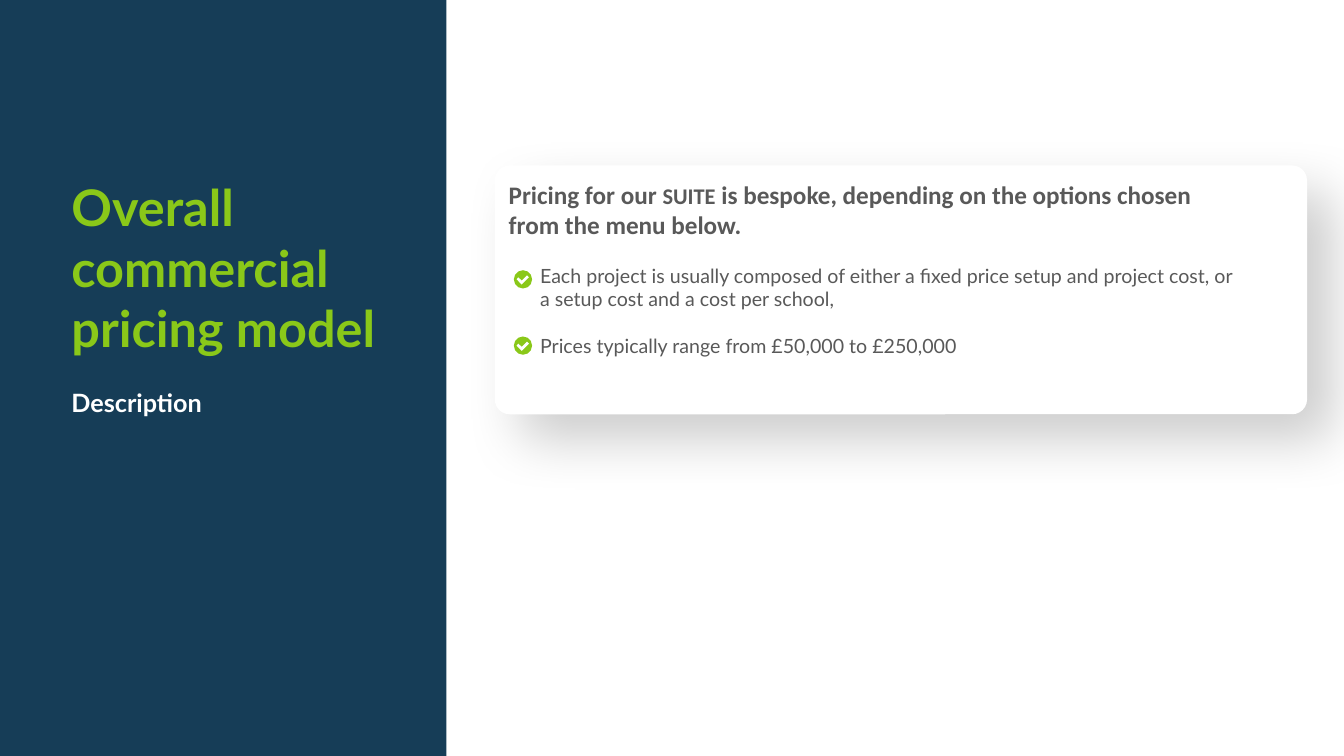
"""Build the pricing model slide."""
import pptx
import pptx.dml.color
import pptx.enum.shapes
import pptx.enum.text
import pptx.oxml
import pptx.oxml.ns
import pptx.util

Cm = pptx.util.Cm
Pt = pptx.util.Pt
SHAPES = pptx.enum.shapes.MSO_SHAPE

NAVY = "163D57"
GREEN = "8AC819"
WHITE = "FFFFFF"
GREY = "595959"

TITLE = {"name": "Lato", "size": Pt(36), "bold": True}
SUBTITLE = {"name": "Lato", "size": Pt(18), "bold": True}
HEADING = {"name": "Calibri", "size": Pt(18), "bold": True}
PRODUCT = {"name": "Calibri", "size": Pt(16), "bold": True}
BODY = {"name": "Lato", "size": Pt(14), "bold": False}

ICON_SIZE = 0.46
TICK = [(0.07, 0.23), (0.11, 0.18), (0.2, 0.26), (0.33, 0.13), (0.38, 0.18), (0.2, 0.36)]


def colour(value):
    """Turn a hex string into a colour."""
    return pptx.dml.color.RGBColor.from_string(value)


def paint(shape, fill):
    """Give a shape a plain fill with no line or shadow."""
    shape.fill.solid()
    shape.fill.fore_color.rgb = colour(fill)
    shape.line.fill.background()
    shape.shadow.inherit = False


def add_block(slide, kind, left, top, width, height, fill):
    """Add a filled preset shape placed in centimetres."""
    shape = slide.shapes.add_shape(kind, Cm(left), Cm(top), Cm(width), Cm(height))
    paint(shape, fill)
    return shape


def add_soft_shadow(shape):
    """Cast a soft shadow down and to the right."""
    shadow = pptx.oxml.parse_xml(
        f'<a:outerShdw {pptx.oxml.ns.nsdecls("a")} blurRad="{Pt(40)}" dist="{Pt(26)}" '
        'dir="2700000" algn="tl" rotWithShape="0">'
        '<a:srgbClr val="000000"><a:alpha val="20000"/></a:srgbClr></a:outerShdw>'
    )
    shape._element.spPr.find(pptx.oxml.ns.qn("a:effectLst")).append(shadow)


def add_text_box(slide, left, top, width, height):
    """Add a wrapping text box and return its text frame."""
    box = slide.shapes.add_textbox(Cm(left), Cm(top), Cm(width), Cm(height))
    box.text_frame.word_wrap = True
    box.text_frame.vertical_anchor = pptx.enum.text.MSO_ANCHOR.TOP
    return box.text_frame


def add_run(paragraph, text, style, fill):
    """Add a run with the given font values."""
    run = paragraph.add_run()
    run.text = text
    for name, value in style.items():
        setattr(run.font, name, value)
    run.font.color.rgb = colour(fill)


def add_point(frame, text):
    """Add an indented paragraph to the card text."""
    paragraph = frame.add_paragraph()
    paragraph.space_before = Pt(17)
    properties = paragraph._p.get_or_add_pPr()
    properties.set("marL", str(Cm(0.79)))
    properties.set("indent", "0")
    add_run(paragraph, text, BODY, GREY)


def add_tick_icon(slide, left, top):
    """Add a green disc holding a white tick."""
    add_block(slide, SHAPES.OVAL, left, top, ICON_SIZE, ICON_SIZE, GREEN)
    points = [(Cm(left + x), Cm(top + y)) for x, y in TICK]
    builder = slide.shapes.build_freeform(*points[0])
    builder.add_line_segments(points[1:], close=True)
    paint(builder.convert_to_shape(), WHITE)


def main():
    """Build and save the presentation."""
    presentation = pptx.Presentation()
    presentation.slide_width = Cm(33.87)
    presentation.slide_height = Cm(19.05)
    slide = presentation.slides.add_slide(presentation.slide_layouts[6])

    add_block(slide, SHAPES.RECTANGLE, 0, 0, 11.25, 19.05, NAVY)
    card = add_block(slide, SHAPES.ROUNDED_RECTANGLE, 12.47, 4.17, 20.47, 6.27, WHITE)
    card.adjustments[0] = 0.06
    add_soft_shadow(card)

    title = add_text_box(slide, 1.55, 4.32, 8.76, 2.51)
    add_run(title.paragraphs[0], "Overall commercial pricing model", TITLE, GREEN)
    subtitle = add_text_box(slide, 1.55, 9.73, 7.59, 2.51)
    subtitle.paragraphs[0].line_spacing = 0.9
    add_run(subtitle.paragraphs[0], "Description", SUBTITLE, WHITE)

    details = add_text_box(slide, 12.57, 4.39, 18.8, 5.56)
    heading = details.paragraphs[0]
    add_run(heading, "Pricing for our ", HEADING, GREY)
    add_run(heading, "SUITE", PRODUCT, GREY)
    add_run(
        heading,
        " is bespoke, depending on the options chosen from the menu below.",
        HEADING,
        GREY,
    )
    add_point(
        details,
        "Each project is usually composed of either a fixed price setup and "
        "project cost, or a setup cost and a cost per school,",
    )
    add_point(details, "Prices typically range from £50,000 to £250,000")
    for top in (6.81, 8.48):
        add_tick_icon(slide, 12.95, top)

    presentation.save("out.pptx")


if __name__ == "__main__":
    main()
